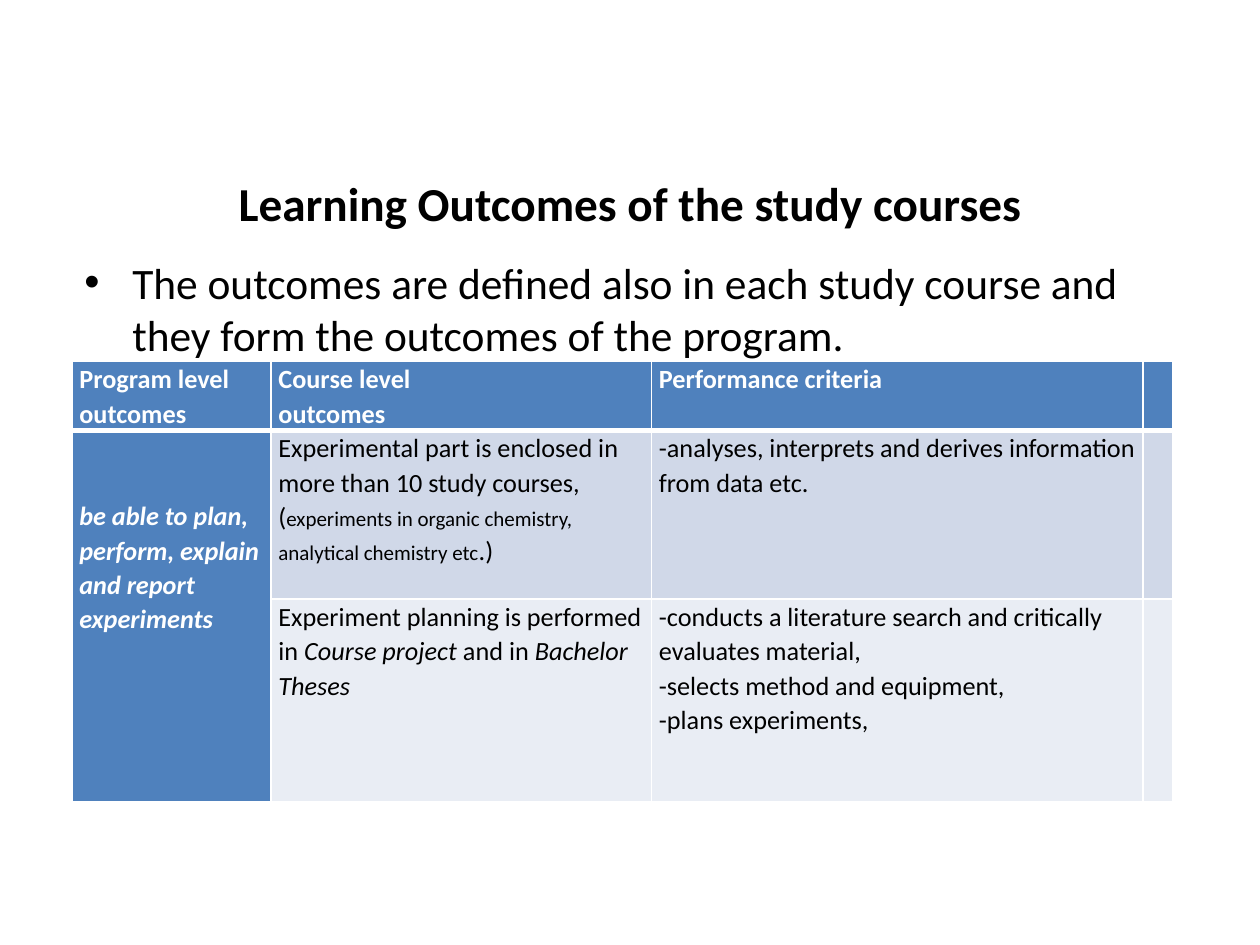
from dataclasses import dataclass

from lxml import etree
from pptx import Presentation
from pptx import util as u
from pptx.dml import color
from pptx.enum import text
from pptx.oxml import ns


@dataclass(frozen=True)
class Theme:
    font: str = "Calibri"
    black: str = "000000"
    white: str = "FFFFFF"
    accent: str = "4F81BD"
    band_dark: str = "D0D8E8"
    band_light: str = "E9EDF4"
    title_size: float = 27
    body_size: float = 24.8
    cell_size: float = 15
    small_size: float = 12
    thin_line: float = 1
    thick_line: float = 3
    line_spacing: float = 1.07
    cell_margin: float = 0.06


THEME = Theme()
COLUMN_WIDTHS = [1.58, 3.02, 3.9, 0.24]
ROW_HEIGHTS = [0.54, 1.34, 1.61]
ROW_FILLS = [THEME.accent, THEME.band_dark, THEME.band_light]
GOAL_TOP = 0.54

SMALL = {"size": THEME.small_size}
ITALIC = {"italic": True}

OUTCOMES = [
    [
        [["Program level"], ["outcomes"]],
        [["Course level"], ["outcomes"]],
        [["Performance criteria"]],
        [],
    ],
    [
        [[("be able to plan, perform, explain and report experiments", ITALIC)]],
        [
            ["Experimental part is enclosed in more than 10 study courses,"],
            ["(", ("experiments in organic chemistry, analytical chemistry etc", SMALL), ".)"],
        ],
        [["-analyses, interprets and derives information from data etc."]],
        [],
    ],
    [
        [],
        [[
            "Experiment planning is performed in ",
            ("Course project ", ITALIC),
            "and in ",
            ("Bachelor Theses", ITALIC),
        ]],
        [
            ["-conducts a literature search and critically evaluates material,"],
            ["-selects method and equipment,"],
            ["-plans experiments,"],
        ],
        [],
    ],
]


def add_span(para, words, size, ink=THEME.black, bold=False, italic=False):
    span = para.add_run()
    span.text = words
    span.font.name = THEME.font
    span.font.size = u.Pt(size)
    span.font.bold = bold
    span.font.italic = italic
    span.font.color.rgb = color.RGBColor.from_string(ink)


def place(box, left, top, width, height):
    box.left, box.top = u.Inches(left), u.Inches(top)
    box.width, box.height = u.Inches(width), u.Inches(height)
    box.text_frame.word_wrap = True
    box.text_frame.auto_size = text.MSO_AUTO_SIZE.NONE


def add_title(page, words):
    box = page.shapes.title
    place(box, 0.69, 1.24, 8.62, 0.74)
    box.text_frame.vertical_anchor = text.MSO_ANCHOR.MIDDLE
    para = box.text_frame.paragraphs[0]
    para.alignment = text.PP_ALIGN.CENTER
    add_span(para, words, THEME.title_size, bold=True)


def add_bullet(page, words):
    box = page.placeholders[1]
    place(box, 0.57, 1.98, 8.62, 0.81)
    para = box.text_frame.paragraphs[0]
    para.space_before = u.Pt(0)
    properties = para._p.get_or_add_pPr()
    properties.set("marL", str(u.Inches(0.38)))
    properties.set("indent", str(-u.Inches(0.38)))
    etree.SubElement(properties, ns.qn("a:buChar"), char="•")
    add_span(para, words, THEME.body_size)


def set_borders(cell, top, bottom):
    properties = cell._tc.get_or_add_tcPr()
    widths = {"lnL": THEME.thin_line, "lnR": THEME.thin_line, "lnT": top, "lnB": bottom}
    for position, (side, width) in enumerate(widths.items()):
        line = etree.Element(ns.qn(f"a:{side}"), w=str(u.Pt(width)))
        fill = etree.SubElement(line, ns.qn("a:solidFill"))
        etree.SubElement(fill, ns.qn("a:srgbClr"), val=THEME.white)
        properties.insert(position, line)


def fill_cell(cell, paragraphs, fill, strong):
    cell.fill.solid()
    cell.fill.fore_color.rgb = color.RGBColor.from_string(fill)
    cell.margin_left = cell.margin_right = u.Inches(THEME.cell_margin)
    cell.margin_top = cell.margin_bottom = 0
    ink = THEME.white if strong else THEME.black
    frame = cell.text_frame
    for index, spans in enumerate(paragraphs):
        para = frame.add_paragraph() if index else frame.paragraphs[0]
        para.line_spacing = THEME.line_spacing
        for item in spans:
            words, style = (item, {}) if isinstance(item, str) else item
            add_span(para, words, **{"size": THEME.cell_size, "ink": ink, "bold": strong, **style})


def add_outcome_table(page):
    frame = page.shapes.add_table(
        len(ROW_HEIGHTS), len(COLUMN_WIDTHS), u.Inches(0.57), u.Inches(2.87),
        u.Inches(sum(COLUMN_WIDTHS)), u.Inches(sum(ROW_HEIGHTS)),
    )
    table = frame.table
    for column, width in zip(table.columns, COLUMN_WIDTHS):
        column.width = u.Inches(width)
    for row, height in zip(table.rows, ROW_HEIGHTS):
        row.height = u.Inches(height)
    for row_index, row in enumerate(OUTCOMES):
        top = THEME.thick_line if row_index == 1 else THEME.thin_line
        bottom = THEME.thick_line if row_index == 0 else THEME.thin_line
        for column_index, paragraphs in enumerate(row):
            cell = table.cell(row_index, column_index)
            strong = row_index == 0 or column_index == 0
            fill = THEME.accent if strong else ROW_FILLS[row_index]
            fill_cell(cell, paragraphs, fill, strong)
            set_borders(cell, top, bottom)
    goal = table.cell(1, 0)
    goal.merge(table.cell(2, 0))
    goal.margin_top = u.Inches(GOAL_TOP)


def main():
    deck = Presentation()
    deck.slide_width, deck.slide_height = u.Inches(10), u.Inches(7.5)
    page = deck.slides.add_slide(deck.slide_layouts[1])
    add_title(page, "Learning Outcomes of the study courses")
    add_bullet(
        page,
        "The outcomes are defined also in each study course and "
        "they form the outcomes of the program.",
    )
    add_outcome_table(page)
    deck.save("out.pptx")


if __name__ == "__main__":
    main()
